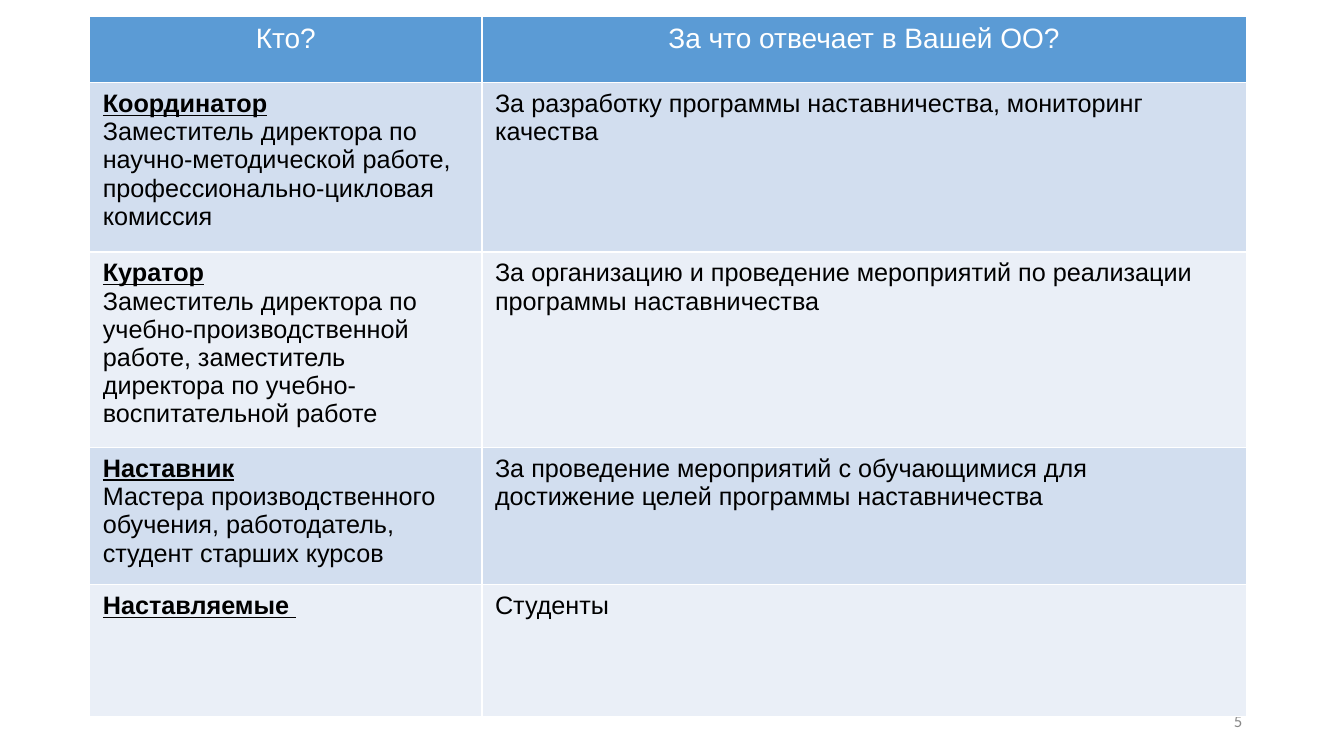
from lxml import etree
from pptx import Presentation
from pptx import util as u
from pptx.dml import color
from pptx.enum import text
from pptx.oxml import ns

HEADER = ["Кто?", "За что отвечает в Вашей ОО?"]
ROLES = [
    ("Координатор",
     "Заместитель директора по научно-методической работе, профессионально-цикловая комиссия",
     "За разработку программы наставничества, мониторинг качества"),
    ("Куратор",
     "Заместитель директора по учебно-производственной работе, "
     "заместитель директора по учебно-воспитательной работе",
     "За организацию и проведение мероприятий по реализации программы наставничества"),
    ("Наставник",
     "Мастера производственного обучения, работодатель, студент старших курсов",
     "За проведение мероприятий с обучающимися для достижение целей программы наставничества"),
    ("Наставляемые ", "", "Студенты"),
]
COLUMN_WIDTHS = [3.89, 7.58]
ROW_HEIGHTS = [0.66, 1.68, 1.94, 1.36, 1.31]


def rgb(value):
    return color.RGBColor.from_string(value)


class SlideBuilder:
    heading = {"name": "Arial", "size": u.Pt(20), "bold": False, "color": "FFFFFF"}
    body = {"name": "Arial", "size": u.Pt(18), "bold": False, "color": "000000"}
    role = {**body, "bold": True, "underline": True}
    number = {"name": "Calibri", "size": u.Pt(12), "color": "888888"}
    bands = ["D2DEEF", "EAEFF7"]
    header_fill = "5B9BD5"
    border = "FFFFFF"
    margins = {"margin_left": 0.13, "margin_right": 0.13,
               "margin_top": 0.07, "margin_bottom": 0.07}

    def __init__(self, page):
        self.page = page

    def add_lines(self, frame, lines, align=text.PP_ALIGN.LEFT):
        for index, (words, style) in enumerate(lines):
            para = frame.add_paragraph() if index else frame.paragraphs[0]
            para.alignment = align
            span = para.add_run()
            span.text = words
            for key, value in style.items():
                if key == "color":
                    span.font.color.rgb = rgb(value)
                else:
                    setattr(span.font, key, value)

    def add_number(self, words, left, top, width, height):
        box = self.page.shapes.add_textbox(*map(u.Inches, (left, top, width, height)))
        box.text_frame.word_wrap = True
        box.text_frame.vertical_anchor = text.MSO_ANCHOR.MIDDLE
        self.add_lines(box.text_frame, [(words, self.number)], text.PP_ALIGN.RIGHT)

    def add_cell(self, cell, lines, fill, align=text.PP_ALIGN.LEFT):
        for key, value in self.margins.items():
            setattr(cell, key, u.Inches(value))
        self.add_lines(cell.text_frame, lines, align)
        properties = cell._tc.get_or_add_tcPr()
        for side in "LRTB":
            line = etree.SubElement(properties, ns.qn(f"a:ln{side}"), w=str(u.Pt(1)))
            solid = etree.SubElement(line, ns.qn("a:solidFill"))
            etree.SubElement(solid, ns.qn("a:srgbClr"), val=self.border)
        cell.fill.solid()
        cell.fill.fore_color.rgb = rgb(fill)

    def add_roles(self, left, top):
        size = (sum(COLUMN_WIDTHS), sum(ROW_HEIGHTS))
        table = self.page.shapes.add_table(
            len(ROW_HEIGHTS), len(COLUMN_WIDTHS),
            *map(u.Inches, (left, top, *size))).table
        for column, width in zip(table.columns, COLUMN_WIDTHS):
            column.width = u.Inches(width)
        for row, height in zip(table.rows, ROW_HEIGHTS):
            row.height = u.Inches(height)
        for index, words in enumerate(HEADER):
            self.add_cell(table.cell(0, index), [(words, self.heading)],
                          self.header_fill, text.PP_ALIGN.CENTER)
        for index, (role, people, duty) in enumerate(ROLES):
            fill = self.bands[index % 2]
            lines = [(role, self.role)]
            if people:
                lines.append((people, self.body))
            self.add_cell(table.cell(index + 1, 0), lines, fill)
            self.add_cell(table.cell(index + 1, 1), [(duty, self.body)], fill)


def main():
    deck = Presentation()
    deck.slide_width, deck.slide_height = u.Inches(13.33), u.Inches(7.5)
    builder = SlideBuilder(deck.slides.add_slide(deck.slide_layouts[6]))
    builder.add_number("5", 9.42, 6.95, 3, 0.4)
    builder.add_roles(0.89, 0.16)
    deck.save("out.pptx")


if __name__ == "__main__":
    main()
